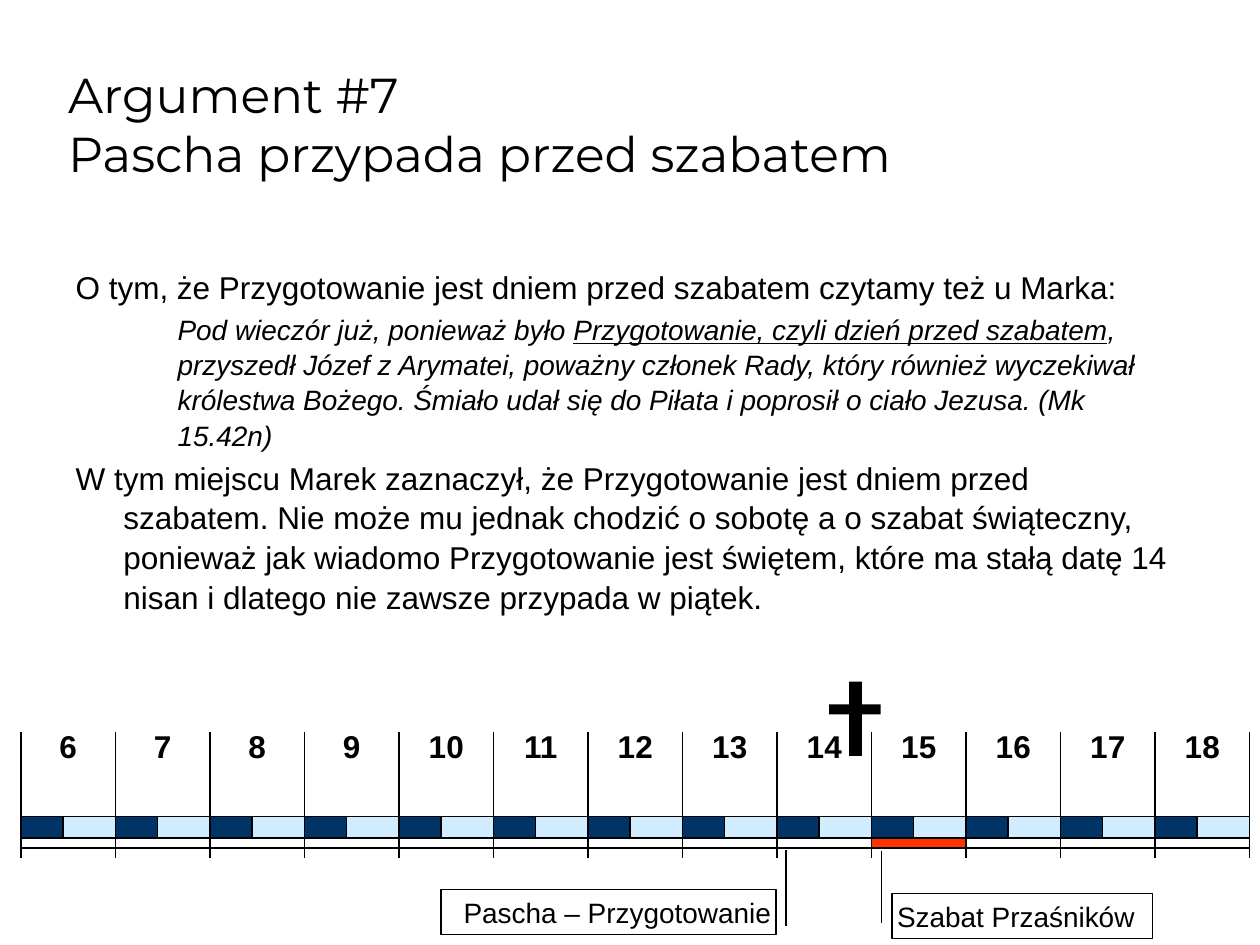
import pptx
import pptx.util
import pptx.dml.color
import pptx.enum.shapes
import pptx.enum.text
import lxml.etree

Inch, Pt = pptx.util.Inches, pptx.util.Pt
Align, Anchor = pptx.enum.text.PP_ALIGN, pptx.enum.text.MSO_ANCHOR
Kind = pptx.enum.shapes.MSO_SHAPE

THEME = {
    "ink": "000000", "night": "003366", "day": "D1EBFF", "feast": "FF3300",
    "head": {"name": "Montserrat", "size": Pt(28)},
    "body": {"name": "Arial", "size": Pt(18)},
    "quote": {"name": "Arial", "size": Pt(16), "italic": True},
    "date": {"name": "Arial", "size": Pt(18), "bold": True},
    "note": {"name": "Arial", "size": Pt(16)},
    "line": Pt(0.75),
}

TITLE = "Argument #7\vPascha przypada przed szabatem"
BODY = [
    ("body", 0, ["O tym, że Przygotowanie jest dniem przed szabatem czytamy też u Marka:"]),
    ("quote", 1, [
        "Pod wieczór już, ponieważ było ",
        "Przygotowanie, czyli dzień przed szabatem",
        ", przyszedł Józef z Arymatei, poważny członek Rady, który również "
        "wyczekiwał królestwa Bożego. Śmiało udał się do Piłata i poprosił "
        "o ciało Jezusa. (Mk 15.42n)"]),
    ("body", 0, [
        "W tym miejscu Marek zaznaczył, że Przygotowanie jest dniem przed "
        "szabatem. Nie może mu jednak chodzić o sobotę a o szabat świąteczny, "
        "ponieważ jak wiadomo Przygotowanie jest świętem, które ma stałą datę "
        "14 nisan i dlatego nie zawsze przypada w piątek."]),
]
UNDER = "Przygotowanie, czyli dzień przed szabatem"
INDENT = [(0.38, -0.38), (0.81, 0)]
DATES = list(range(6, 19))
FEAST = 15
NOTES = [
    ("Szabat Przaśników", (7.08, 7.09, 2.07, 0.36), Align.LEFT, (0.65, -0.04, -0.93, -0.04)),
    ("Pascha – Przygotowanie", (3.5, 7.06, 2.66, 0.36), Align.RIGHT, (0.8, 1.03, -0.88, 1.03)),
]
CROSS = [(6.74, 5.41, 0.1, 0.59), (6.58, 5.59, 0.41, 0.08)]

WIDE, HIGH = 10, 7.5
LEFT, COL = WIDE / 60, WIDE * 0.075
NIGHT = COL * 4 / 9
BAND, STRIP = 6.48, 6.65

deck = pptx.Presentation()
deck.slide_width, deck.slide_height = Inch(WIDE), Inch(HIGH)
slide = deck.slides.add_slide(deck.slide_layouts[1])


def apply(item, **form):
    for key, val in form.items():
        setattr(item, key, val)


def tint(name):
    return pptx.dml.color.RGBColor.from_string(THEME[name])


def style(font, name, **more):
    apply(font, **THEME[name], **more)
    font.color.rgb = tint("ink")


def place(shape, box):
    apply(shape, **dict(zip(("left", "top", "width", "height"), map(Inch, box))))


def block(home, box, fill=None, edge=True, kind=Kind.RECTANGLE):
    shape = home.shapes.add_shape(kind, *map(Inch, box))
    shape.shadow.inherit = False
    if fill:
        shape.fill.solid()
        shape.fill.fore_color.rgb = tint(fill)
    else:
        shape.fill.background()
    if edge:
        shape.line.color.rgb = tint("ink")
        shape.line.width = THEME["line"]
    else:
        shape.line.fill.background()
    return shape


def label(frame, text, name, align):
    para = frame.paragraphs[0]
    para.text = text
    para.alignment = align
    style(para.runs[0].font, name)


def tick(x):
    line = slide.shapes.add_connector(
        pptx.enum.shapes.MSO_CONNECTOR.STRAIGHT, Inch(x), Inch(6.81), Inch(x), Inch(5.81))
    line.line.color.rgb = tint("ink")
    line.line.width = THEME["line"]
    lxml.etree.SubElement(line._element.spPr, pptx.oxml.ns.qn("a:effectLst"))


def write_head():
    head = slide.shapes.title
    place(head, (0.44, 0.25, 8.5, 1.25))
    head.text_frame.vertical_anchor = Anchor.BOTTOM
    para = head.text_frame.paragraphs[0]
    para.text = TITLE
    para.alignment = Align.LEFT
    for run in para.runs:
        style(run.font, "head")


def write_body():
    body = slide.placeholders[1]
    place(body, (0.5, 2.06, 8.94, 3.27))
    frame = body.text_frame
    frame.auto_size = pptx.enum.text.MSO_AUTO_SIZE.NONE
    for i, (name, level, parts) in enumerate(BODY):
        para = frame.add_paragraph() if i else frame.paragraphs[0]
        props = para._p.get_or_add_pPr()
        lxml.etree.SubElement(props, pptx.oxml.ns.qn("a:buNone"))
        for key, val in zip(("marL", "indent"), INDENT[level]):
            props.set(key, str(Inch(val)))
        apply(para, level=level, line_spacing=1.05, space_before=Pt(3 if i else 0))
        for part in parts:
            run = para.add_run()
            run.text = part
            style(run.font, name, underline=part == UNDER)


def draw_notes():
    for text, box, align, bends in NOTES:
        note = block(slide, box, kind=Kind.LINE_CALLOUT_1)
        for i, bend in enumerate(bends):
            note.adjustments[i] = bend
        frame = note.text_frame
        apply(frame, word_wrap=True, vertical_anchor=Anchor.MIDDLE)
        for side in ("left", "top", "right", "bottom"):
            setattr(frame, "margin_" + side, Inch(0.04))
        label(frame, text, "note", align)


def draw_days():
    for i, date in enumerate(DATES):
        x = LEFT + i * COL
        pair = slide.shapes.add_group_shape()
        block(pair, (x, BAND, NIGHT, 0.17), "night")
        block(pair, (x + NIGHT, BAND, COL - NIGHT, 0.17), "day")
        block(slide, (x, STRIP, COL, 0.08), "feast" if date == FEAST else None)
        box = slide.shapes.add_textbox(*map(Inch, (x, 5.64, COL, 0.83)))
        apply(box.text_frame, word_wrap=False, vertical_anchor=Anchor.TOP,
              margin_top=Inch(0.13))
        label(box.text_frame, str(date), "date", Align.CENTER)
    for i in range(len(DATES) + 1):
        tick(LEFT + i * COL)


def draw_cross():
    cross = slide.shapes.add_group_shape()
    for box in CROSS:
        block(cross, box, "ink", edge=False)


write_head()
write_body()
draw_notes()
draw_days()
draw_cross()
deck.save("out.pptx")
